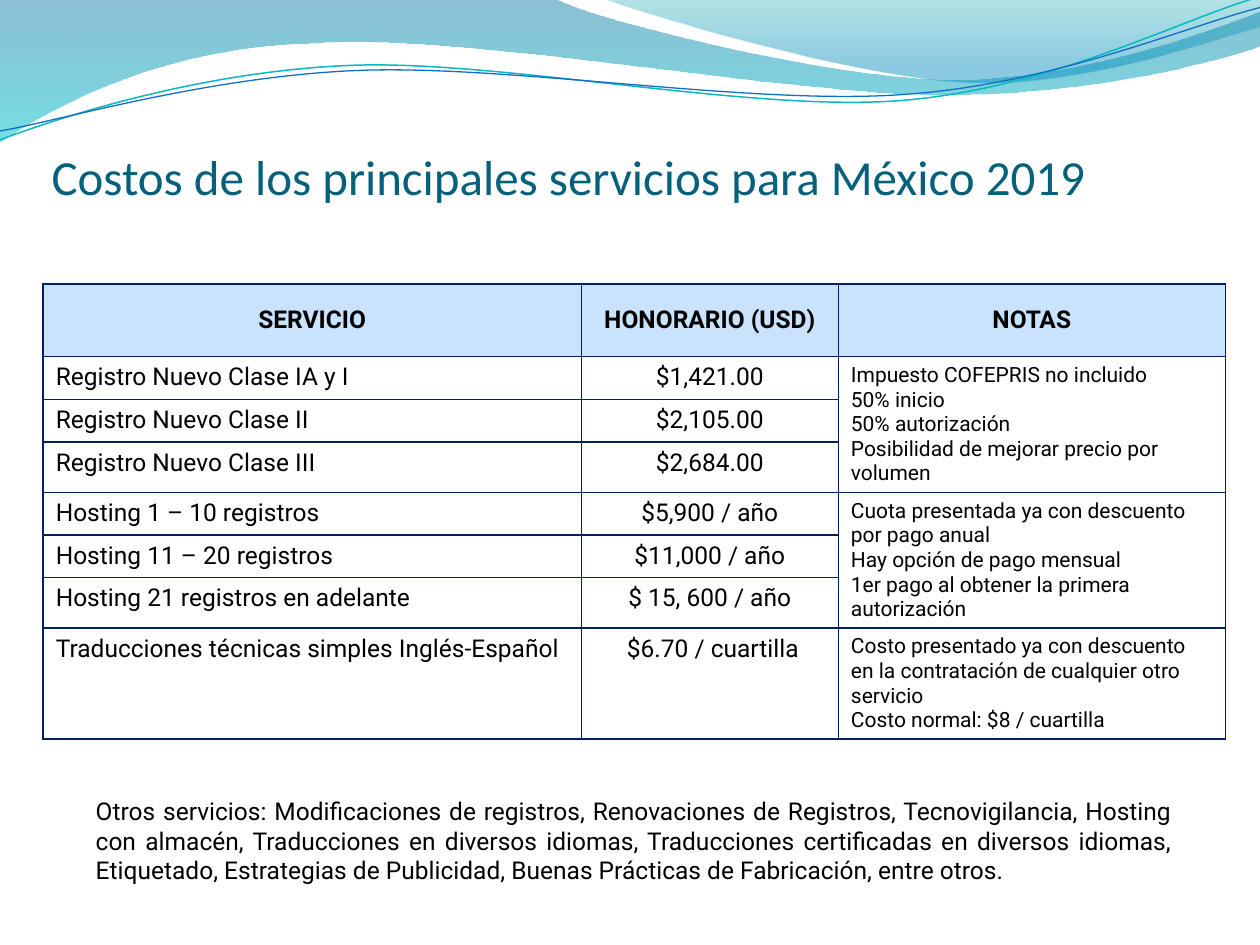
from dataclasses import dataclass

from lxml.etree import SubElement
from pptx import Presentation
from pptx.dml.color import RGBColor
from pptx.enum.text import MSO_ANCHOR, MSO_AUTO_SIZE, PP_ALIGN
from pptx.oxml.ns import qn
from pptx.util import Cm, Pt


@dataclass(frozen=True)
class Theme:
    head: str = "Calibri"
    body: str = "Roboto"
    title: RGBColor = RGBColor(0x04, 0x61, 0x7B)
    ink: RGBColor = RGBColor(0, 0, 0)
    band: RGBColor = RGBColor(0xC8, 0xE3, 0xFB)
    rule: str = "002060"
    big: Pt = Pt(28)
    text: Pt = Pt(14)
    note: Pt = Pt(12)


THEME = Theme()

# Wave points are in tenths of the box width: pairs are line ends,
# six numbers are the two handles and the end of a curve.
# Filled waves carry gradient stops: position, colour, opacity in percent.
FILLED = [
    ([(0, 0), (4.4, -0.01), (4.76, 0.17, 6.64, 0.63, 7.58, 0.63),
      (8.53, 0.63, 9.58, 0.26, 10, 0.09), (10.01, 0.36),
      (9.83, 0.44, 8.7, 0.76, 7.46, 0.75), (6.22, 0.75, 3.82, 0.28, 2.57, 0.34),
      (1.29, 0.36, 0.46, 0.83, -0.01, 1.13)],
     [(0, "0074A1", 45), (1, "00C6CF", 55)]),
    ([(4.79, -0.01), (5.09, 0.11, 6.82, 0.62, 7.69, 0.65),
      (8.56, 0.69, 9.61, 0.32, 10, 0.21), (10, 0)],
     [(0, "00A1A9", 30), (0.8, "008BBF", 45)]),
]
LINES = [
    ([(0, 1.11), (0.48, 0.93, 1.58, 0.57, 2.77, 0.52),
      (3.95, 0.47, 5.93, 0.89, 7.13, 0.8), (8.33, 0.71, 9.38, 0.15, 9.98, -0.02)],
     "0AB8BF", 0.85),
    ([(0, 1.04), (0.47, 0.96, 1.64, 0.61, 2.83, 0.56),
      (4.03, 0.51, 5.97, 0.84, 7.17, 0.75), (8.36, 0.67, 9.41, 0.21, 10, 0.06)],
     "0F6FC6", 0.75),
]

HEADS = ["SERVICIO", "HONORARIO (USD)", "NOTAS"]
FEES = [
    ("Registro Nuevo Clase IA y I", "$1,421.00"),
    ("Registro Nuevo Clase II", "$2,105.00"),
    ("Registro Nuevo Clase III", "$2,684.00"),
    ("Hosting 1 – 10 registros", "$5,900 / año"),
    ("Hosting 11 – 20 registros", "$11,000 / año"),
    ("Hosting 21 registros en adelante", "$ 15, 600 / año"),
    ("Traducciones técnicas simples Inglés-Español", " $6.70 / cuartilla"),
]
# First row, last row, lines
NOTES = [
    (1, 3, ["Impuesto COFEPRIS no incluido", "50% inicio", "50% autorización",
            "Posibilidad de mejorar precio por volumen"]),
    (4, 6, ["Cuota presentada ya con descuento por pago anual",
            "Hay opción de pago mensual",
            "1er pago al obtener la primera autorización"]),
    (7, 7, ["Costo presentado ya con descuento en la contratación de "
            "cualquier otro servicio", "Costo normal: $8 / cuartilla"]),
]
COLS = [Cm(10.85), Cm(5.18), Cm(7.8)]
ROWS = [Cm(h) for h in (1.46, 0.86, 0.86, 1.01, 0.86, 0.86, 1.01, 2.24)]
OTHER = ("Otros servicios: Modificaciones de registros, Renovaciones de Registros, "
         "Tecnovigilancia, Hosting con almacén, Traducciones en diversos idiomas, "
         "Traducciones certificadas en diversos idiomas, Etiquetado, Estrategias de "
         "Publicidad, Buenas Prácticas de Fabricación, entre otros. ")


def add_wave(slide, box, path, close):
    """Draw the path through its end points, then bend the curved parts."""
    left, top, width, _ = box
    unit = width / 10

    def place(x, y):
        return round(left + x * unit), round(top + y * unit)

    ends = [place(*part[-2:]) for part in path]
    pen = slide.shapes.build_freeform(*ends[0])
    pen.add_line_segments(ends[1:], close=close)
    wave = pen.convert_to_shape()
    wave.shadow.inherit = False
    sides = list(wave._element.spPr.iter(qn("a:lnTo")))
    for side, part in zip(sides, path[1:]):
        if len(part) == 2:
            continue
        side.tag = qn("a:cubicBezTo")
        side.remove(side[0])
        for at in range(0, 6, 2):
            x, y = place(*part[at:at + 2])
            SubElement(side, qn("a:pt"), x=str(x - wave.left), y=str(y - wave.top))
    return wave


def add_waves(slide, box):
    for path, stops in FILLED:
        wave = add_wave(slide, box, path, True)
        wave.line.fill.background()
        wave.fill.gradient()
        wave.fill.gradient_angle = 270
        for stop, (place, tint, _) in zip(wave.fill.gradient_stops, stops):
            stop.position = place
            stop.color.rgb = RGBColor.from_string(tint)
        tints = wave._element.spPr.iter(qn("a:srgbClr"))
        for node, (_, _, alpha) in zip(tints, stops):
            SubElement(node, qn("a:alpha"), val=str(alpha * 1000))
    for path, tint, size in LINES:
        wave = add_wave(slide, box, path, False)
        wave.fill.background()
        wave.line.color.rgb = RGBColor.from_string(tint)
        wave.line.width = Pt(size)


def write(frame, lines, size, align=PP_ALIGN.LEFT, face=THEME.body,
          tint=THEME.ink, bold=False):
    frame.text = "\n".join(lines)
    for para in frame.paragraphs:
        para.alignment = align
        font = para.font
        font.name, font.size, font.bold = face, size, bold
        font.color.rgb = tint


def add_title(slide, box):
    title = slide.shapes.title
    title.left, title.top, title.width, title.height = box
    frame = title.text_frame
    frame.auto_size = MSO_AUTO_SIZE.NONE
    frame.vertical_anchor = MSO_ANCHOR.BOTTOM
    frame.margin_left = frame.margin_right = Cm(0.25)
    frame.margin_top = frame.margin_bottom = Cm(0.25)
    write(frame, ["Costos de los principales servicios para México 2019"],
          THEME.big, face=THEME.head, tint=THEME.title)


def rule(cell):
    """Draw the four borders of a cell."""
    props = cell._tc.get_or_add_tcPr()
    for side in ("lnL", "lnR", "lnT", "lnB"):
        line = SubElement(props, qn(f"a:{side}"), w=str(Pt(1)))
        fill = SubElement(line, qn("a:solidFill"))
        SubElement(fill, qn("a:srgbClr"), val=THEME.rule)


def add_fees(slide, box):
    table = slide.shapes.add_table(len(ROWS), len(COLS), *box).table
    table.first_row = table.horz_banding = False
    for col, width in zip(table.columns, COLS):
        col.width = width
    for row, height in zip(table.rows, ROWS):
        row.height = height
    for cell in table.iter_cells():
        rule(cell)
        cell.fill.background()
    for col, head in enumerate(HEADS):
        cell = table.cell(0, col)
        cell.fill.solid()
        cell.fill.fore_color.rgb = THEME.band
        cell.vertical_anchor = MSO_ANCHOR.MIDDLE
        write(cell.text_frame, [head], THEME.text, PP_ALIGN.CENTER, bold=True)
    for row, (name, fee) in enumerate(FEES, 1):
        write(table.cell(row, 0).text_frame, [name], THEME.text)
        write(table.cell(row, 1).text_frame, [fee], THEME.text, PP_ALIGN.CENTER)
    for first, last, lines in NOTES:
        cell = table.cell(first, 2)
        if last > first:
            cell.merge(table.cell(last, 2))
        write(cell.text_frame, lines, THEME.note)


def add_other(slide, box):
    frame = slide.shapes.add_textbox(*box).text_frame
    frame.word_wrap = True
    frame.auto_size = MSO_AUTO_SIZE.SHAPE_TO_FIT_TEXT
    write(frame, [OTHER], THEME.text, PP_ALIGN.JUSTIFY)


def main():
    deck = Presentation()
    deck.slide_width, deck.slide_height = Cm(25.4), Cm(19.05)
    slide = deck.slides.add_slide(deck.slide_layouts[5])
    add_waves(slide, (Cm(0), Cm(0), deck.slide_width, Cm(2.9)))
    add_title(slide, (Cm(0.79), Cm(1.84), Cm(23.32), Cm(2.54)))
    add_fees(slide, (Cm(0.87), Cm(5.73), sum(COLS), sum(ROWS)))
    add_other(slide, (Cm(1.68), Cm(15.93), Cm(22.2), Cm(2.06)))
    deck.save("out.pptx")


if __name__ == "__main__":
    main()
